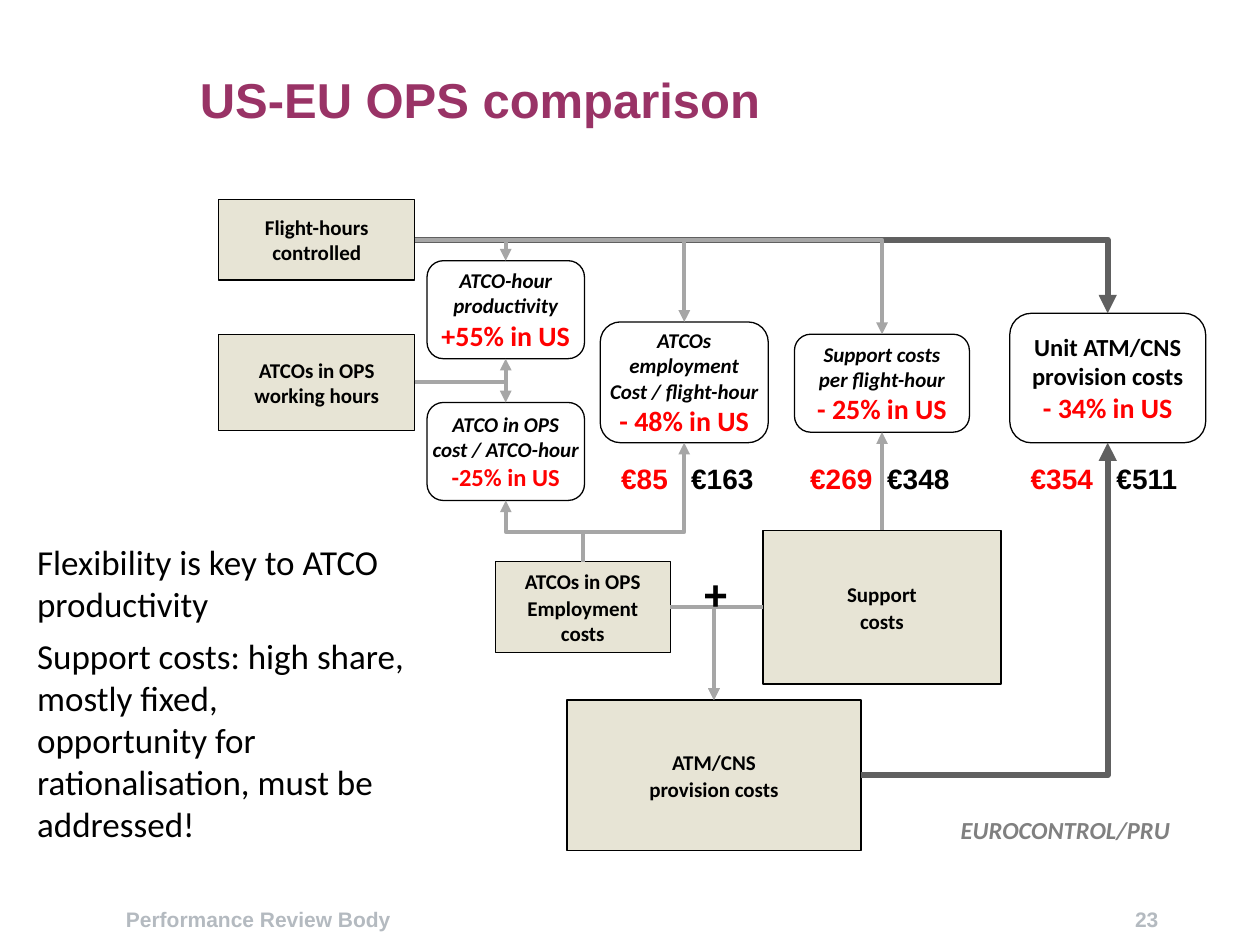
from lxml.etree import SubElement
from pptx import Presentation
from pptx.dml.color import RGBColor
from pptx.enum.shapes import MSO_CONNECTOR as CONNECTOR, MSO_SHAPE as SHAPE
from pptx.enum.text import MSO_ANCHOR as ANCHOR, MSO_AUTO_SIZE as AUTO_SIZE, PP_ALIGN as ALIGN
from pptx.oxml.ns import qn
from pptx.util import Pt

TITLE = "US-EU OPS comparison"
MESSAGES = [
    "Flexibility is key to ATCO productivity",
    "Support costs: high share, mostly fixed,\nopportunity for rationalisation, must be addressed!",
]

FORMATS = {
    "title": dict(name="Arial", size=28, bold=True, color="993366"),
    "message": dict(name="Calibri", size=20, bold=False, color="000000"),
    "label": dict(name="Calibri", size=12, bold=True, color="000000"),
    "measure": dict(name="Calibri", size=12, bold=True, italic=True, color="000000"),
    "unit": dict(name="Calibri", size=14, bold=True, color="000000"),
    "result": dict(name="Calibri", size=16, bold=True, color="FF0000"),
    "small result": dict(name="Calibri", size=14, bold=True, color="FF0000"),
    "us price": dict(name="Arial", size=16, bold=True, color="FF0000"),
    "eu price": dict(name="Arial", size=16, bold=True, color="000000"),
    "plus": dict(name="Arial", size=24, bold=True, color="000000"),
    "source": dict(name="Calibri", size=14, bold=True, italic=True, color="808080"),
    "footer": dict(name="Arial", size=12, bold=True, color="B4BAC0"),
}

INPUTS = {
    "flight hours": ((125, 114, 112, 46), ["Flight-hours controlled"]),
    "working hours": ((125, 191, 112, 55), ["ATCOs in OPS working hours"]),
    "employment": ((283, 321, 100, 52), ["ATCOs in OPS", "Employment costs"]),
    "support": ((436, 303, 136, 88), ["Support", "costs"]),
    "provision": ((324, 400, 168, 86), ["ATM/CNS", "provision costs"]),
}

RATIOS = {
    "productivity": ((244, 149, 90, 56), None, ["ATCO-hour", "productivity"], "measure",
                     "+55% in US", "result"),
    "hourly cost": ((244, 230, 90, 56), None, ["ATCO in OPS", "cost / ATCO-hour"], "measure",
                    "-25% in US", "small result"),
    "employment ratio": ((343, 184, 96, 69), None, ["ATCOs", "employment", "Cost / flight-hour"],
                         "measure", "- 48% in US", "result"),
    "support ratio": ((454, 191, 100, 56), 31, ["Support costs", "per flight-hour"], "measure",
                      "- 25% in US", "result"),
    "unit cost": ((577, 179, 112, 74), 80, ["Unit ATM/CNS", "provision costs"], "unit",
                  "- 34% in US", "result"),
}

PRICES = [(355, 40, "€85", "€163"), (463, 44, "€269", "€348"), (589, 49, "€354", "€511")]

TOP, LEFT, BOTTOM, RIGHT = range(4)
DARK, LIGHT = ("606060", 3.5), ("A6A6A6", 2.25)
ARROWS = [
    ("provision", RIGHT, "unit cost", BOTTOM, DARK),
    ("flight hours", RIGHT, "unit cost", TOP, DARK),
    ("working hours", RIGHT, "productivity", BOTTOM, LIGHT),
    ("flight hours", RIGHT, "productivity", TOP, LIGHT),
    ("employment", TOP, "employment ratio", BOTTOM, LIGHT),
    ("flight hours", RIGHT, "employment ratio", TOP, LIGHT),
    ("working hours", RIGHT, "hourly cost", TOP, LIGHT),
    ("employment", TOP, "hourly cost", BOTTOM, LIGHT),
    ("flight hours", RIGHT, "support ratio", TOP, LIGHT),
    ("support", TOP, "support ratio", BOTTOM, LIGHT),
    ("support", LEFT, "provision", TOP, LIGHT),
    ("employment", RIGHT, "provision", TOP, LIGHT),
]
BEND_RISE = 17


def color(value):
    return RGBColor.from_string(value)


def apply_format(font, key):
    for attribute, value in FORMATS[key].items():
        if attribute == "color":
            font.color.rgb = color(value)
        else:
            setattr(font, attribute, Pt(value) if attribute == "size" else value)


def write(frame, paragraphs, align=ALIGN.LEFT, tab=None, before=0, after=0):
    for index, runs in enumerate(paragraphs):
        paragraph = frame.paragraphs[0] if index == 0 else frame.add_paragraph()
        paragraph.alignment = align
        paragraph.space_before = Pt(before if index else 0)
        paragraph.space_after = Pt(after)
        if tab:
            tabs = SubElement(paragraph._p.get_or_add_pPr(), qn("a:tabLst"))
            SubElement(tabs, qn("a:tab"), pos=str(Pt(tab[0])), algn=tab[1])
        for text, key in runs:
            for number, line in enumerate(text.split("\n")):
                if number:
                    paragraph.add_line_break()
                run = paragraph.add_run()
                run.text = line
                apply_format(run.font, key)


def place(shape, box):
    for attribute, value in zip(("left", "top", "width", "height"), box):
        setattr(shape, attribute, Pt(value))


def add_text(slide, box, runs, inset=0, wrap=True, tab=None):
    frame = slide.shapes.add_textbox(*map(Pt, box)).text_frame
    frame.word_wrap = wrap
    for side in ("left", "right", "top", "bottom"):
        setattr(frame, "margin_" + side, Pt(inset))
    write(frame, [runs], tab=tab)


def add_box(slide, kind, box, fill, alpha):
    shape = slide.shapes.add_shape(kind, *map(Pt, box))
    shape.shadow.inherit = False
    shape.line.color.rgb = color("000000")
    shape.line.width = Pt(0.75)
    if alpha is None:
        shape.fill.background()
    else:
        shape.fill.solid()
        shape.fill.fore_color.rgb = color(fill)
        tint = shape.element.spPr.find(".//" + qn("a:solidFill"))[0]
        SubElement(tint, qn("a:alpha"), val=str(alpha * 1000))
    shape.text_frame.vertical_anchor = ANCHOR.MIDDLE
    return shape


def side_point(shape, side):
    x = {LEFT: 0, RIGHT: shape.width}.get(side, shape.width // 2)
    y = {TOP: 0, BOTTOM: shape.height}.get(side, shape.height // 2)
    return shape.left + x, shape.top + y


def add_arrow(slide, source, start, target, end, style):
    (x1, y1), (x2, y2) = side_point(source, start), side_point(target, end)
    add = slide.shapes.add_connector
    if x1 == x2:
        connector = add(CONNECTOR.STRAIGHT, x1, y1, x2, y2)
        connector.begin_connect(source, start)
        connector.end_connect(target, end)
    elif start == TOP:
        middle_x, middle_y = (x1 + x2) // 2, (y1 + y2) // 2
        rise, shift = y1 - y2, x2 - x1
        connector = add(CONNECTOR.ELBOW, middle_x - rise // 2, middle_y - shift // 2,
                        middle_x + rise // 2, middle_y + shift // 2)
        connector.element.spPr.find(qn("a:xfrm")).set("rot", "16200000")
        guides = connector.element.spPr.find(".//" + qn("a:avLst"))
        bend = round(Pt(BEND_RISE) / rise * 100000)
        SubElement(guides, qn("a:gd"), name="adj1", fmla=f"val {bend}")
    else:
        connector = add(CONNECTOR.ELBOW, x1, y1, x2, y2)
        connector.element.spPr.find(qn("a:prstGeom")).set("prst", "bentConnector2")
    connector.line.color.rgb = color(style[0])
    connector.line.width = Pt(style[1])
    properties = connector.element.spPr
    SubElement(properties.find(qn("a:ln")), qn("a:tailEnd"), type="triangle")
    SubElement(properties, qn("a:effectLst"))


def main():
    presentation = Presentation()
    presentation.slide_width, presentation.slide_height = Pt(720), Pt(540)
    slide = presentation.slides.add_slide(presentation.slide_layouts[1])

    title, body = slide.placeholders
    place(title, (107, 35, 573, 43))
    title.text_frame.vertical_anchor = ANCHOR.MIDDLE
    write(title.text_frame, [[(TITLE, "title")]])
    place(body, (14, 305, 249, 183))
    for text_frame in (title.text_frame, body.text_frame):
        text_frame.auto_size = AUTO_SIZE.NONE
    write(body.text_frame, [[(text, "message")] for text in MESSAGES], after=6)
    for paragraph in body.text_frame.paragraphs:
        properties = paragraph._p.get_or_add_pPr()
        properties.set("marL", "0")
        properties.set("indent", "0")
        SubElement(properties, qn("a:buNone"))

    shapes = {}
    for key, (box, lines) in INPUTS.items():
        shapes[key] = add_box(slide, SHAPE.RECTANGLE, box, "C4BD97", 40)
        write(shapes[key].text_frame, [[(line, "label")] for line in lines], ALIGN.CENTER, before=1)
    for key, (box, alpha, lines, line_format, result, result_format) in RATIOS.items():
        shapes[key] = add_box(slide, SHAPE.ROUNDED_RECTANGLE, box, "FFFFFF", alpha)
        shapes[key].text_frame.word_wrap = False
        paragraphs = [[(line, line_format)] for line in lines] + [[(result, result_format)]]
        write(shapes[key].text_frame, paragraphs, ALIGN.CENTER)

    for source, start, target, end, style in ARROWS:
        add_arrow(slide, shapes[source], start, shapes[target], end, style)
    for left, gap, us_price, eu_price in PRICES:
        add_text(slide, (left, 264, 92, 20),
                 [(us_price + "\t", "us price"), (eu_price, "eu price")], tab=(gap, "l"))
    add_text(slide, (402, 325, 16, 28), [("+", "plus")], wrap=False)
    add_text(slide, (545, 462, 158, 25), [("EUROCONTROL/PRU", "source")], inset=4)
    add_text(slide, (72, 518, 596, 14), [("Performance Review Body\t23", "footer")], tab=(590, "r"))
    presentation.save("out.pptx")


if __name__ == "__main__":
    main()
